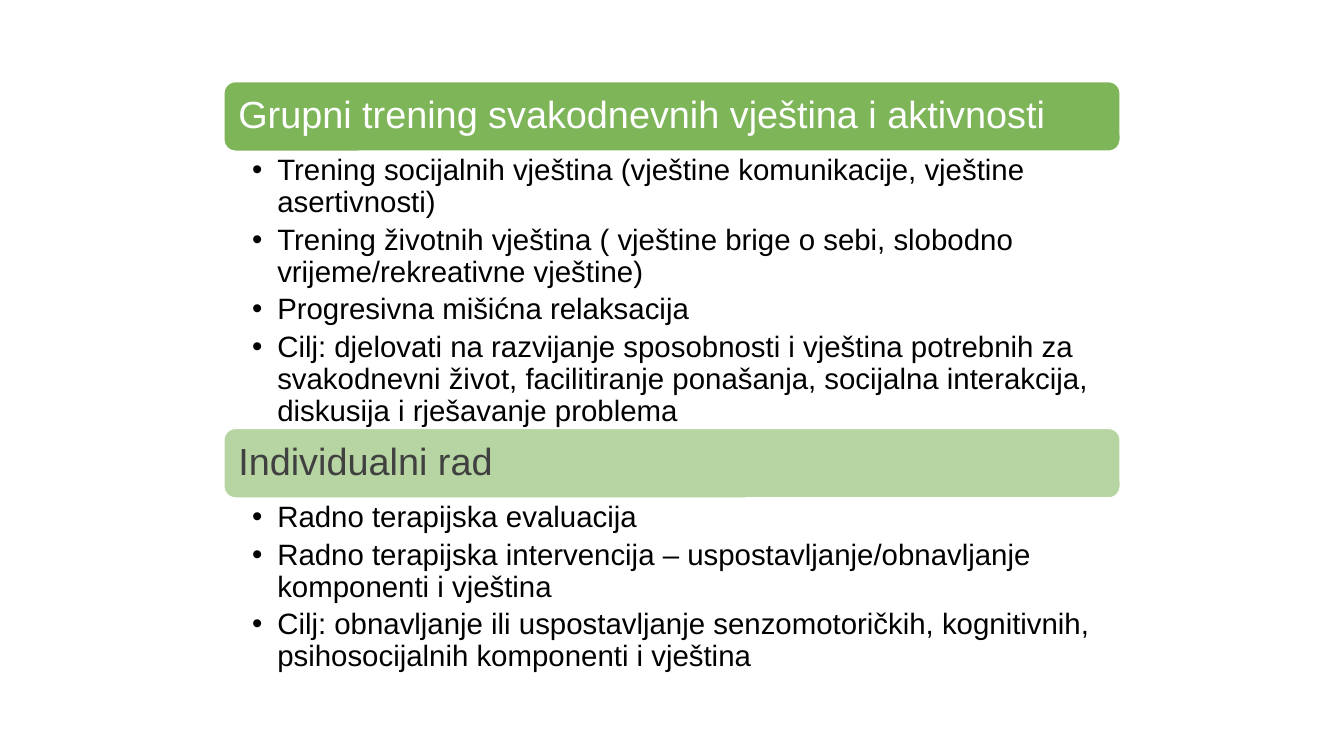
from lxml import etree
from pptx import Presentation
from pptx.dml.color import RGBColor
from pptx.enum.shapes import MSO_SHAPE
from pptx.enum.text import MSO_ANCHOR, PP_ALIGN
from pptx.oxml.ns import qn
from pptx.util import Inches, Pt

ROUNDED = MSO_SHAPE.ROUNDED_RECTANGLE
MIDDLE, TOP = MSO_ANCHOR.MIDDLE, MSO_ANCHOR.TOP
LEFT = PP_ALIGN.LEFT

GREEN = RGBColor(0x70, 0xAD, 0x47)
WHITE = RGBColor(0xFF, 0xFF, 0xFF)
GREY = RGBColor(0x40, 0x40, 0x40)
BLACK = RGBColor(0x00, 0x00, 0x00)

# Heading, heading colour, bar opacity in percent, height of the list, list items
SECTIONS = [
    ("Grupni trening svakodnevnih vještina i aktivnosti", WHITE, 90, 2.75, [
        "Trening socijalnih vještina (vještine komunikacije, vještine asertivnosti)",
        "Trening životnih vještina ( vještine brige o sebi, slobodno "
        "vrijeme/rekreativne vještine)",
        "Progresivna mišićna relaksacija",
        "Cilj: djelovati na razvijanje sposobnosti i vještina potrebnih za "
        "svakodnevni život, facilitiranje ponašanja, socijalna interakcija, "
        "diskusija i rješavanje problema",
    ]),
    ("Individualni rad", GREY, 50, 1.74, [
        "Radno terapijska evaluacija",
        "Radno terapijska intervencija – uspostavljanje/obnavljanje "
        "komponenti i vještina",
        "Cilj: obnavljanje ili uspostavljanje senzomotoričkih, kognitivnih, "
        "psihosocijalnih komponenti i vještina",
    ]),
]

SECTION_LEFT, SECTION_TOP, SECTION_WIDTH = 2.22, 0.81, 8.89
BAR_HEIGHT = 0.69
BULLET_INDENT = 0.25


def write_text(shape, lines, *, size, color, margins, anchor=TOP,
               space_after=0, bullet=False):
    frame = shape.text_frame
    frame.word_wrap = True
    frame.vertical_anchor = anchor
    (frame.margin_left, frame.margin_top,
     frame.margin_right, frame.margin_bottom) = map(Inches, margins)
    for index, line in enumerate(lines):
        paragraph = frame.add_paragraph() if index else frame.paragraphs[0]
        paragraph.alignment = LEFT
        paragraph.line_spacing = 0.9
        paragraph.space_after = Pt(space_after)
        run = paragraph.add_run()
        run.text = line
        run.font.name = "Arial"
        run.font.size = Pt(size)
        run.font.color.rgb = color
        if bullet:
            add_bullet(paragraph)


def add_bullet(paragraph):
    properties = paragraph._p.get_or_add_pPr()
    properties.set("marL", str(Inches(BULLET_INDENT)))
    properties.set("indent", str(-Inches(BULLET_INDENT)))
    etree.SubElement(properties, qn("a:buFont")).set("typeface", "Arial")
    etree.SubElement(properties, qn("a:buChar")).set("char", "•")


def add_bar(slide, top, opacity):
    bar = slide.shapes.add_shape(
        ROUNDED, Inches(SECTION_LEFT), Inches(top),
        Inches(SECTION_WIDTH), Inches(BAR_HEIGHT))
    bar.shadow.inherit = False
    bar.fill.solid()
    bar.fill.fore_color.rgb = GREEN
    fill_color = bar._element.spPr.find(".//" + qn("a:srgbClr"))
    etree.SubElement(fill_color, qn("a:alpha")).set("val", str(opacity * 1000))
    bar.line.color.rgb = WHITE
    bar.line.width = Pt(1)
    return bar


def main():
    presentation = Presentation()
    presentation.slide_width = Inches(13.33)
    presentation.slide_height = Inches(7.5)
    slide = presentation.slides.add_slide(presentation.slide_layouts[6])

    top = SECTION_TOP
    for heading, heading_color, opacity, list_height, items in SECTIONS:
        bar = add_bar(slide, top, opacity)
        write_text(bar, [heading], size=27, color=heading_color,
                   margins=(0.11, 0.11, 0.11, 0.11), anchor=MIDDLE)
        top += BAR_HEIGHT
        item_box = slide.shapes.add_textbox(
            Inches(SECTION_LEFT), Inches(top),
            Inches(SECTION_WIDTH), Inches(list_height))
        write_text(item_box, items, size=21, color=BLACK,
                   margins=(0.28, 0.04, 0.21, 0.04), space_after=4.4, bullet=True)
        top += list_height

    presentation.save("out.pptx")


if __name__ == "__main__":
    main()
